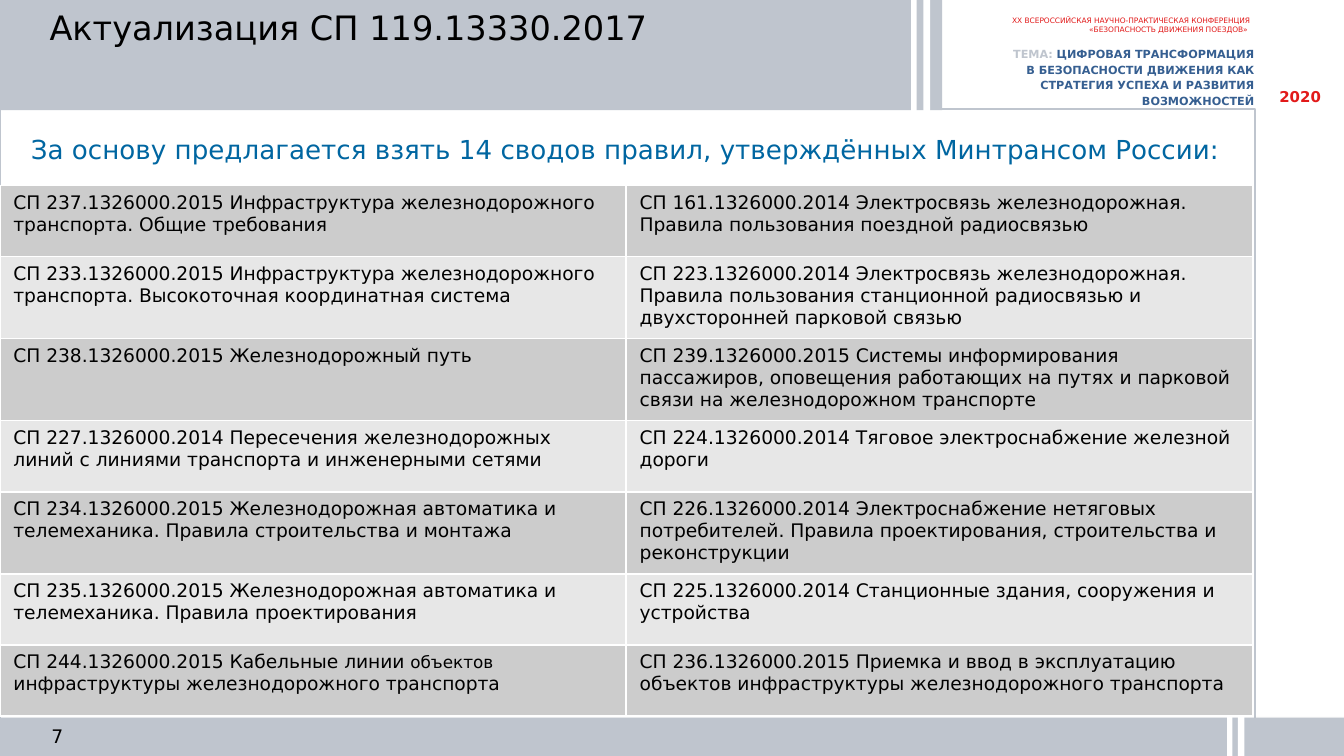
import pptx
import pptx.dml.color
import pptx.enum.shapes
import pptx.enum.text
import pptx.oxml
import pptx.oxml.ns
import pptx.util

Inches = pptx.util.Inches
Pt = pptx.util.Pt
ALIGN = pptx.enum.text.PP_ALIGN

THEME = {
    "font": "DejaVu Sans",
    "grey": "BFC5CE", "white": "FFFFFF", "black": "000000",
    "red": "E21A1A", "navy": "365F91", "blue": "0066A1",
    "bands": ("CCCCCC", "E7E7E7"),
    "title": 18, "lead": 14, "body": 10, "small_body": 9,
    "year": 8, "topic": 6, "event": 4,
}

TITLE = "Актуализация СП 119.13330.2017"
LEAD = "За основу предлагается взять 14 сводов правил, утверждённых Минтрансом России:"
EVENT = "XX ВСЕРОССИЙСКАЯ НАУЧНО-ПРАКТИЧЕСКАЯ КОНФЕРЕНЦИЯ «БЕЗОПАСНОСТЬ ДВИЖЕНИЯ ПОЕЗДОВ» "
TOPIC_LABEL = "ТЕМА: "
TOPIC_LINES = (
    "ЦИФРОВАЯ ТРАНСФОРМАЦИЯ",
    "В БЕЗОПАСНОСТИ ДВИЖЕНИЯ КАК СТРАТЕГИЯ УСПЕХА И РАЗВИТИЯ ВОЗМОЖНОСТЕЙ",
)
YEAR = "2020"
PAGE_NUMBER = "7"
CABLE_RULES = (
    ("СП 244.1326000.2015 Кабельные линии ", "body"),
    ("объектов", "small_body"),
    (" инфраструктуры железнодорожного транспорта", "body"),
)
RULES = [
    ("СП 237.1326000.2015 Инфраструктура железнодорожного транспорта. Общие требования",
     "СП 161.1326000.2014 Электросвязь железнодорожная. Правила пользования поездной радиосвязью"),
    ("СП 233.1326000.2015 Инфраструктура железнодорожного транспорта. Высокоточная координатная система",
     "СП 223.1326000.2014 Электросвязь железнодорожная. Правила пользования станционной радиосвязью и двухсторонней парковой связью"),
    ("СП 238.1326000.2015 Железнодорожный путь",
     "СП 239.1326000.2015 Системы информирования пассажиров, оповещения работающих на путях и парковой связи на железнодорожном транспорте"),
    ("СП 227.1326000.2014 Пересечения железнодорожных линий с линиями транспорта и инженерными сетями",
     "СП 224.1326000.2014 Тяговое электроснабжение железной дороги"),
    ("СП 234.1326000.2015 Железнодорожная автоматика и телемеханика. Правила строительства и монтажа",
     "СП 226.1326000.2014 Электроснабжение нетяговых потребителей. Правила проектирования, строительства и реконструкции"),
    ("СП 235.1326000.2015 Железнодорожная автоматика и телемеханика. Правила проектирования",
     "СП 225.1326000.2014 Станционные здания, сооружения и устройства"),
    (CABLE_RULES,
     "СП 236.1326000.2015 Приемка и ввод в эксплуатацию объектов инфраструктуры железнодорожного транспорта"),
]
TALL_ROWS = {1, 2, 4}
TALL, SHORT = 0.61, 0.53
WIDTH = 10
HEIGHT = WIDTH * 9 / 16
TABLE_TOP, COLUMN_WIDTH = 1.38, 4.66
STRIPES = [
    (6.87, -0.01, 0.05, 0.84), (6.78, -0.01, 0.04, 0.84),
    (9.21, 5.3, 0.05, 0.35), (9.13, 5.3, 0.04, 0.35),
]


def rgb(name):
    return pptx.dml.color.RGBColor.from_string(THEME.get(name, name))


def style(font, size, color, bold=False):
    font.name = THEME["font"]
    font.size = Pt(THEME[size])
    font.color.rgb = rgb(color)
    font.bold = bold


def add_block(page, place, fill=None, line=None):
    block = page.shapes.add_shape(
        pptx.enum.shapes.MSO_SHAPE.RECTANGLE, *map(Inches, place))
    block.shadow.inherit = False
    if fill:
        block.fill.solid()
        block.fill.fore_color.rgb = rgb(fill)
    else:
        block.fill.background()
    if line:
        block.line.color.rgb = rgb(line)
        block.line.width = Pt(1)
    else:
        block.line.fill.background()
    return block


def add_shadow(block):
    effects = block._element.spPr.find(pptx.oxml.ns.qn("a:effectLst"))
    effects.append(pptx.oxml.parse_xml(
        f'<a:outerShdw {pptx.oxml.ns.nsdecls("a")} blurRad="{Pt(3.1)}" '
        f'dist="{Pt(1.8)}" dir="5400000" rotWithShape="0">'
        '<a:srgbClr val="808080"><a:alpha val="35000"/></a:srgbClr></a:outerShdw>'))


def add_text(page, place, text, size, color, align=ALIGN.LEFT, bold=False):
    box = page.shapes.add_textbox(*map(Inches, place))
    frame = box.text_frame
    frame.word_wrap = True
    frame.auto_size = pptx.enum.text.MSO_AUTO_SIZE.SHAPE_TO_FIT_TEXT
    para = frame.paragraphs[0]
    para.alignment = align
    if text:
        para.add_run().text = text
    style(para.font, size, color, bold)
    return frame


def add_topic(page):
    para = add_text(page, (6.97, 0.29, 2.46, 0.44), "", "topic", "navy",
                    ALIGN.RIGHT, True).paragraphs[0]
    para.line_spacing = 1.15
    label = para.add_run()
    label.text = TOPIC_LABEL
    label.font.color.rgb = rgb("grey")
    for index, line in enumerate(TOPIC_LINES):
        if index:
            para.add_line_break()
        para.add_run().text = line


def add_borders(cell):
    properties = cell._tc.get_or_add_tcPr()
    for index, side in enumerate("LRTB"):
        properties.insert(index, pptx.oxml.parse_xml(
            f'<a:ln{side} {pptx.oxml.ns.nsdecls("a")} w="{Pt(1)}"><a:solidFill>'
            f'<a:srgbClr val="{THEME["white"]}"/></a:solidFill></a:ln{side}>'))


def fill_cell(cell, content, band):
    cell.fill.solid()
    cell.fill.fore_color.rgb = rgb(band)
    add_borders(cell)
    para = cell.text_frame.paragraphs[0]
    style(para.font, "body", "black")
    pieces = [(content, "body")] if isinstance(content, str) else content
    for text, size in pieces:
        span = para.add_run()
        span.text = text
        if size != "body":
            span.font.size = Pt(THEME[size])


def add_rules(page):
    heights = [TALL if row in TALL_ROWS else SHORT for row in range(len(RULES))]
    table = page.shapes.add_table(
        len(RULES), 2, 0, Inches(TABLE_TOP), Inches(2 * COLUMN_WIDTH),
        Inches(sum(heights))).table
    table.first_row = False
    table.horz_banding = False
    for row, (height, contents) in enumerate(zip(heights, RULES)):
        table.rows[row].height = Inches(height)
        for column, content in enumerate(contents):
            fill_cell(table.cell(row, column), content, THEME["bands"][row % 2])


def main():
    deck = pptx.Presentation()
    deck.slide_width, deck.slide_height = Inches(WIDTH), Inches(HEIGHT)
    page = deck.slides.add_slide(deck.slide_layouts[6])

    add_block(page, (0, 0.81, 9.34, 4.8), line="grey")
    add_block(page, (0, 0, 7.01, 0.82), fill="grey")
    add_shadow(add_block(page, (0, 5.34, WIDTH, 0.29), fill="grey"))
    number = add_text(page, (0.22, 5.39, 0.25, 0.17), PAGE_NUMBER, "body", "black", ALIGN.RIGHT)
    number.margin_left = number.margin_right = number.margin_top = number.margin_bottom = 0
    number.vertical_anchor = pptx.enum.text.MSO_ANCHOR.MIDDLE
    add_topic(page)
    add_text(page, (9.42, 0.6, 0.69, 0.24), YEAR, "year", "red", bold=True)
    for place in STRIPES:
        add_block(page, place, fill="white")
    add_text(page, (7.02, 0.07, 2.38, 0.24), EVENT, "event", "red", ALIGN.RIGHT)
    add_text(page, (0, 0.94, 9.31, 0.34), LEAD, "lead", "blue", ALIGN.CENTER)
    add_text(page, (0.27, 0, 6.32, 0.4), TITLE, "title", "black")
    add_rules(page)
    deck.save("out.pptx")


if __name__ == "__main__":
    main()
